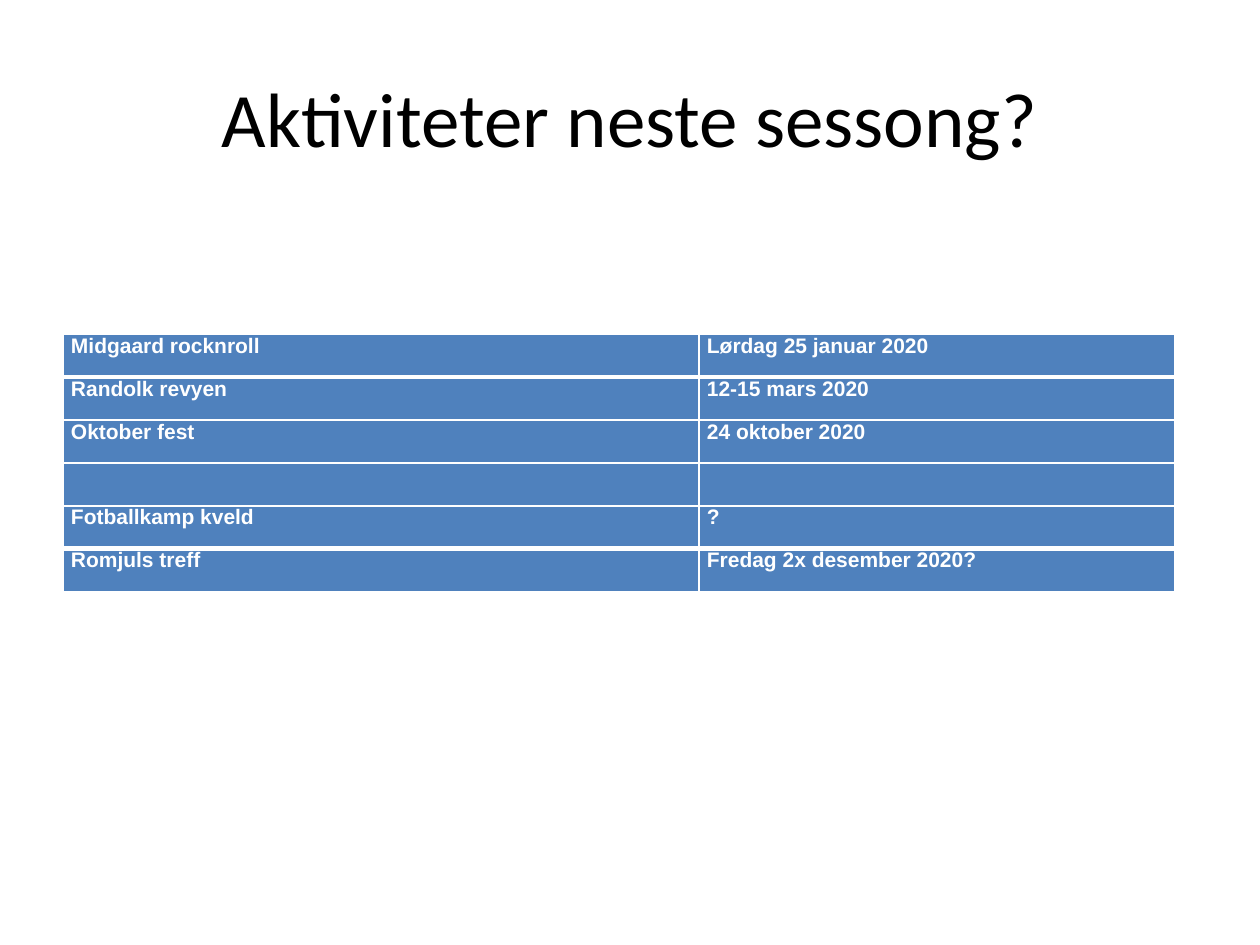
from lxml.etree import SubElement
from pptx import Presentation
from pptx.dml.color import RGBColor
from pptx.enum.text import MSO_ANCHOR, PP_ALIGN
from pptx.oxml.ns import qn
from pptx.util import Emu, Pt

ROWS = [
    ("Midgaard rocknroll", "Lørdag 25 januar 2020"),
    ("Randolk revyen", "12-15 mars 2020"),
    ("Oktober fest", "24 oktober 2020"),
    ("", ""),
    ("Fotballkamp kveld", "?"),
    ("Romjuls treff", "Fredag 2x desember 2020?"),
]
THICK_RULES = (1, 5)


def px(n):
    return Emu(round(n * 914400 / 126))


def rgb(value):
    return RGBColor.from_string(value)


def write(tf, text, font="Arial", size=12, color="000000", bold=False, align=PP_ALIGN.LEFT):
    p = tf.paragraphs[0]
    p.alignment = align
    p.font.size = Pt(size)
    if text:
        r = p.add_run()
        r.text = text
        r.font.name = font
        r.font.size = Pt(size)
        r.font.bold = bold
        r.font.color.rgb = rgb(color)


class Deck:
    """Holds the style and the current slide, and adds elements to it."""

    title_font = "Calibri"
    fill = "4F81BD"
    line = "FFFFFF"

    def __init__(self, prs):
        self.slide = prs.slides.add_slide(prs.slide_layouts[6])

    def title(self, text, x, y, w, h):
        tf = self.slide.shapes.add_textbox(px(x), px(y), px(w), px(h)).text_frame
        tf.word_wrap = True
        tf.vertical_anchor = MSO_ANCHOR.MIDDLE
        write(tf, text, font=self.title_font, size=44, align=PP_ALIGN.CENTER)

    def border(self, cell, side, width):
        tcPr = cell._tc.get_or_add_tcPr()
        ln = SubElement(tcPr, qn(f"a:ln{side}"), w=str(Pt(width)))
        fill = SubElement(ln, qn("a:solidFill"))
        SubElement(fill, qn("a:srgbClr"), val=self.line)

    def cell(self, cell, text, top, bottom):
        cell.margin_left = cell.margin_right = px(8)
        cell.margin_top = cell.margin_bottom = 0
        for side, width in (("L", 1), ("R", 1), ("T", top), ("B", bottom)):
            self.border(cell, side, width)
        cell.fill.solid()
        cell.fill.fore_color.rgb = rgb(self.fill)
        write(cell.text_frame, text, color=self.line, bold=True)

    def table(self, rows, x, y, widths, row_h, thick):
        table = self.slide.shapes.add_table(
            len(rows), len(widths), px(x), px(y), px(sum(widths)), px(row_h * len(rows))
        ).table
        for column, width in zip(table.columns, widths):
            column.width = px(width)
        rules = [3 if i in thick else 1 for i in range(len(rows) + 1)]
        for i, texts in enumerate(rows):
            table.rows[i].height = px(row_h)
            for j, text in enumerate(texts):
                self.cell(table.cell(i, j), text, rules[i], rules[i + 1])


def main():
    prs = Presentation()
    prs.slide_width, prs.slide_height = px(1260), px(945)
    deck = Deck(prs)
    deck.title("Aktiviteter neste sessong?", 63, 38, 1134, 158)
    deck.table(ROWS, 63, 334, (636, 476), 43, THICK_RULES)
    prs.save("out.pptx")


if __name__ == "__main__":
    main()
